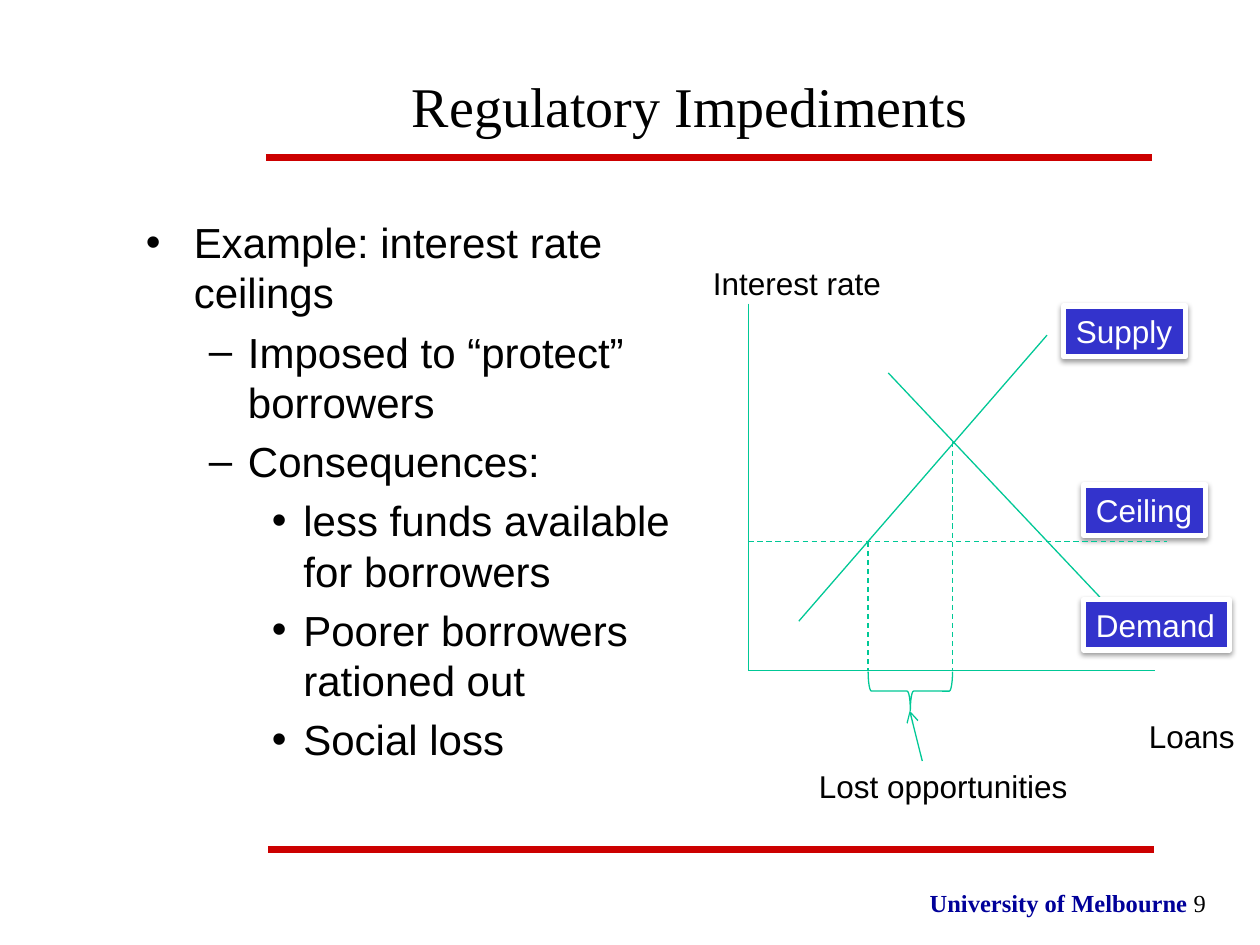
from lxml import etree
from pptx import Presentation
from pptx.dml.color import RGBColor
from pptx.enum.dml import MSO_LINE
from pptx.enum.shapes import MSO_CONNECTOR, MSO_SHAPE
from pptx.enum.text import MSO_ANCHOR as Anchor, MSO_AUTO_SIZE, PP_ALIGN as Align
from pptx.oxml import parse_xml
from pptx.oxml.ns import nsdecls, qn
from pptx.util import Inches, Pt

COLORS = {
    "rule": "CC0000",
    "curve": "00C896",
    "label": "3333CC",
    "footer": "000099",
    "black": "000000",
    "white": "FFFFFF",
}
SERIF, SANS = "Times New Roman", "Arial"
# Bullet character, left margin and hanging indent for each outline level
LEVELS = [("•", 0.38, 0.38), ("–", 0.81, 0.31), ("•", 1.25, 0.25)]


def rgb(name):
    return RGBColor.from_string(COLORS[name])


def add_text(para, text, *, size=18, font=SANS, color="black", bold=False):
    span = para.add_run()
    span.text = text
    span.font.size = Pt(size)
    span.font.name = font
    span.font.bold = bold
    span.font.color.rgb = rgb(color)


def set_bullet(para, level):
    mark, margin, hanging = LEVELS[level]
    props = para._p.get_or_add_pPr()
    props.set("marL", str(Inches(margin)))
    props.set("indent", str(-Inches(hanging)))
    etree.SubElement(props, qn("a:buFont")).set("typeface", SANS)
    etree.SubElement(props, qn("a:buChar")).set("char", mark)


def add_soft_shadow(shape):
    shape._element.spPr.append(parse_xml(
        f'<a:effectLst {nsdecls("a")}>'
        f'<a:outerShdw blurRad="{Pt(3.1)}" dist="{Pt(1.6)}" dir="5400000" rotWithShape="0">'
        f'<a:srgbClr val="{COLORS["black"]}"><a:alpha val="38000"/></a:srgbClr>'
        '</a:outerShdw></a:effectLst>'))


class SlidePainter:
    def __init__(self, page):
        self.page = page

    def box(self, left, top, width, height, *, wrap=True, anchor=Anchor.TOP):
        box = self.page.shapes.add_textbox(*map(Inches, (left, top, width, height)))
        box.text_frame.word_wrap = wrap
        box.text_frame.vertical_anchor = anchor
        return box.text_frame

    def caption(self, text, left, top, width):
        frame = self.box(left, top, width, 0.4, wrap=False)
        frame.auto_size = MSO_AUTO_SIZE.SHAPE_TO_FIT_TEXT
        add_text(frame.paragraphs[0], text)

    def label(self, text, left, top, width):
        shape = self.page.shapes.add_shape(
            MSO_SHAPE.RECTANGLE, *map(Inches, (left, top, width, 0.4)))
        shape.fill.solid()
        shape.fill.fore_color.rgb = rgb("label")
        shape.line.color.rgb = rgb("white")
        shape.line.width = Pt(3)
        add_soft_shadow(shape)
        frame = shape.text_frame
        frame.word_wrap = False
        frame.auto_size = MSO_AUTO_SIZE.SHAPE_TO_FIT_TEXT
        frame.vertical_anchor = Anchor.TOP
        frame.paragraphs[0].alignment = Align.LEFT
        add_text(frame.paragraphs[0], text, color="white")

    def line(self, start, end, *, color="curve", width=0.75, dashed=False, arrow=False):
        line = self.page.shapes.add_connector(
            MSO_CONNECTOR.STRAIGHT, *map(Inches, (*start, *end)))
        line.line.color.rgb = rgb(color)
        line.line.width = Pt(width)
        if dashed:
            line.line.dash_style = MSO_LINE.DASH
        if arrow:
            etree.SubElement(line.line._get_or_add_ln(), qn("a:tailEnd")).set("type", "arrow")
        etree.SubElement(line._element.spPr, qn("a:effectLst"))

    def brace_below(self, left, top, width, height):
        """Draw a brace that opens upward, given the area it covers once turned."""
        middle_x, middle_y = left + width / 2, top + height / 2
        brace = self.page.shapes.add_shape(
            MSO_SHAPE.RIGHT_BRACE, Inches(middle_x - height / 2),
            Inches(middle_y - width / 2), Inches(height), Inches(width))
        brace.rotation = 90
        brace.shadow.inherit = False
        brace.fill.background()
        brace.line.color.rgb = rgb("curve")
        brace.line.width = Pt(0.75)

    def outline(self, items, left, top, width, height):
        frame = self.box(left, top, width, height)
        for index, (level, text) in enumerate(items):
            para = frame.add_paragraph() if index else frame.paragraphs[0]
            para.level = level
            set_bullet(para, level)
            if index:
                para.space_before = Pt(5)
            add_text(para, text, size=24)


def draw_frame(painter):
    footer = painter.box(7.24, 7, 2.43, 0.5).paragraphs[0]
    footer.alignment = Align.RIGHT
    add_text(footer, "University of Melbourne ", size=14, font=SERIF, color="footer", bold=True)
    add_text(footer, "9", size=14, font=SERIF)
    for left, y in ((2.13, 6.74), (2.11, 1.25)):
        painter.line((left, y), (left + 7.03, y), color="rule", width=4)
    title = painter.box(1.78, 0.42, 7.39, 0.83, anchor=Anchor.MIDDLE).paragraphs[0]
    title.alignment = Align.CENTER
    add_text(title, "Regulatory Impediments", size=32, font=SERIF)


def draw_market(painter):
    axis_x, axis_y = 5.94, 5.32
    ceiling_y = 4.3
    rationed_x, balance_x, balance_y = 6.89, 7.56, 3.51

    painter.line((axis_x, 2.41), (axis_x, axis_y))
    painter.line((axis_x, axis_y), (9.17, axis_y))
    painter.caption("Interest rate", 5.56, 2.05, 1.55)
    painter.caption("Loans", 9.02, 5.64, 0.89)

    painter.line((6.34, 4.93), (8.31, 2.66))
    painter.label("Supply", 8.44, 2.43, 0.97)
    painter.label("Ceiling", 8.6, 3.85, 0.97)
    painter.line((axis_x, ceiling_y), (9.26, ceiling_y), dashed=True)
    painter.line((8.73, 4.74), (7.05, 2.96))
    painter.label("Demand", 8.6, 4.76, 1.16)

    painter.line((balance_x, balance_y), (balance_x, axis_y), dashed=True)
    painter.line((rationed_x, ceiling_y), (rationed_x, axis_y), dashed=True)
    painter.brace_below(rationed_x, axis_y + 0.01, balance_x - rationed_x, 0.31)
    painter.caption("Lost opportunities", 6.4, 6.04, 2.19)
    painter.line((7.32, 6.04), (7.22, 5.64), arrow=True)


def main():
    deck = Presentation()
    deck.slide_width, deck.slide_height = Inches(10), Inches(7.5)
    painter = SlidePainter(deck.slides.add_slide(deck.slide_layouts[6]))
    draw_frame(painter)
    painter.outline([
        (0, "Example: interest rate ceilings"),
        (1, "Imposed to “protect” borrowers"),
        (1, "Consequences:"),
        (2, "less funds available for borrowers"),
        (2, "Poorer borrowers rationed out"),
        (2, "Social loss"),
    ], 1.06, 1.67, 4.5, 5)
    draw_market(painter)
    deck.save("out.pptx")


if __name__ == "__main__":
    main()
